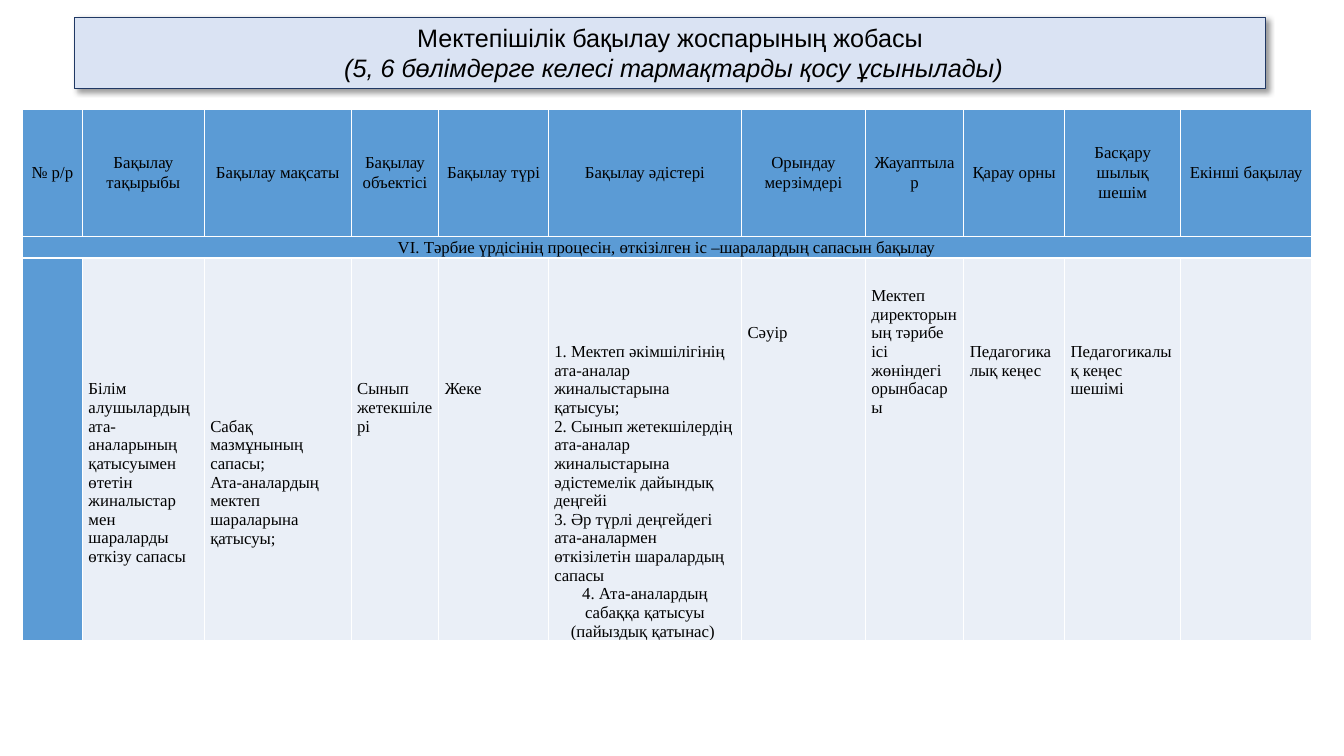
from dataclasses import dataclass

from lxml import etree
from pptx import Presentation
from pptx import util as u
from pptx.dml.color import RGBColor
from pptx.enum import shapes, text
from pptx.oxml import parse_xml
from pptx.oxml.ns import nsdecls, qn


@dataclass(frozen=True)
class Theme:
    ink: str = "000000"
    banner: str = "DAE3F3"
    banner_line: str = "203864"
    head: str = "5B9BD5"
    body: str = "EAEFF7"
    border: str = "FFFFFF"
    title_font: str = "Arial"
    table_font: str = "Times New Roman"
    title_size: int = 18
    table_size: int = 12


theme = Theme()
rgb = RGBColor.from_string
CENTER, LEFT = text.PP_ALIGN.CENTER, text.PP_ALIGN.LEFT


def write(tf, line, first=True, font=theme.table_font, size=theme.table_size,
          align=LEFT, italic=False, spacing=None):
    p = tf.paragraphs[0] if first else tf.add_paragraph()
    p.alignment = align
    if spacing:
        p.line_spacing = spacing
    r = p.add_run()
    r.text = line
    r.font.name, r.font.size = font, u.Pt(size)
    r.font.italic, r.font.bold = italic, False
    r.font.color.rgb = rgb(theme.ink)


def style_cell(cell, fill, side, anchor, bottom=0):
    cell.margin_left = cell.margin_right = u.Cm(side)
    cell.margin_top, cell.margin_bottom = 0, u.Cm(bottom)
    cell.vertical_anchor = anchor
    tc_pr = cell._tc.get_or_add_tcPr()
    for edge in ("lnL", "lnR", "lnT", "lnB"):
        ln = etree.SubElement(tc_pr, qn(f"a:{edge}"), w=str(u.Pt(1)))
        paint = etree.SubElement(ln, qn("a:solidFill"))
        etree.SubElement(paint, qn("a:srgbClr"), val=theme.border)
    cell.fill.solid()
    cell.fill.fore_color.rgb = rgb(fill)


prs = Presentation()
prs.slide_width, prs.slide_height = u.Cm(33.87), u.Cm(19.05)
s = prs.slides.add_slide(prs.slide_layouts[6])

# Title banner with a soft shadow
sp = s.shapes.add_shape(shapes.MSO_SHAPE.RECTANGLE,
                        u.Cm(1.88), u.Cm(0.43), u.Cm(30.02), u.Cm(1.8))
sp.fill.solid()
sp.fill.fore_color.rgb = rgb(theme.banner)
sp.line.color.rgb = rgb(theme.banner_line)
sp.line.width = u.Pt(0.75)
sp.shadow.inherit = False
sp._element.spPr.find(qn("a:effectLst")).append(parse_xml(
    f'<a:outerShdw {nsdecls("a")} blurRad="{u.Pt(4)}" dist="{u.Pt(3)}" '
    'dir="2700000" algn="tl" rotWithShape="0"><a:srgbClr val="000000">'
    '<a:alpha val="40000"/></a:srgbClr></a:outerShdw>'))
sp.text_frame.word_wrap = True
title = dict(font=theme.title_font, size=theme.title_size, align=CENTER)
write(sp.text_frame, "Мектепішілік бақылау жоспарының жобасы", **title)
write(sp.text_frame, " (5, 6 бөлімдерге келесі тармақтарды қосу ұсынылады)",
      first=False, italic=True, **title)

# Columns: width in cm, heading, body paragraphs, free lines under the body
columns = [
    (1.52, "№ р/р", [], 0),
    (3.07, "Бақылау тақырыбы",
     ["Білім алушылардың ата-аналарының қатысуымен өтетін жиналыстар мен "
      "шараларды өткізу сапасы"], 4),
    (3.7, "Бақылау мақсаты",
     ["Сабақ мазмұнының сапасы;",
      "Ата-аналардың мектеп шараларына қатысуы;"], 5),
    (2.21, "Бақылау объектісі", ["Сынып жетекшілері"], 11),
    (2.76, "Бақылау түрі", ["Жеке"], 13),
    (4.87, "Бақылау әдістері",
     ["1. Мектеп әкімшілігінің ата-аналар жиналыстарына қатысуы;",
      "2. Сынып жетекшілердің ата-аналар жиналыстарына әдістемелік "
      "дайындық деңгейі",
      "3. Әр түрлі деңгейдегі ата-аналармен өткізілетін шаралардың сапасы",
      "4. Ата-аналардың сабаққа қатысуы (пайыздық қатынас) "], 0),
    (3.12, "Орындау мерзімдері", ["Сәуір"], 16),
    (2.48, "Жауаптылар",
     ["Мектеп директорының тәрибе ісі жөніндегі орынбасары"], 12),
    (2.54, "Қарау орны", ["Педагогикалық кеңес"], 14),
    (2.93, "Басқару шылық шешім", ["Педагогикалық кеңес шешімі"], 13),
    (3.29, "Екінші бақылау", [], 0),
]
row_heights = [3.2, 0.55, 9.65]
line_height = 0.47

# Inspection plan table
table = s.shapes.add_table(
    len(row_heights), len(columns), u.Cm(0.56), u.Cm(2.75),
    u.Cm(sum(c[0] for c in columns)), u.Cm(sum(row_heights))).table
table.first_row = table.horz_banding = False
for row, height in zip(table.rows, row_heights):
    row.height = u.Cm(height)

for i, (width, heading, lines, free_lines) in enumerate(columns):
    table.columns[i].width = u.Cm(width)
    head, section, body = (table.cell(row, i) for row in range(3))
    style_cell(head, theme.head, 0.18, text.MSO_ANCHOR.MIDDLE)
    write(head.text_frame, heading, align=CENTER, spacing=1.07)
    style_cell(section, theme.head, 0.15, text.MSO_ANCHOR.MIDDLE)
    style_cell(body, theme.body if i else theme.head, 0.15,
               text.MSO_ANCHOR.BOTTOM, free_lines * line_height)
    for n, line in enumerate(lines):
        write(body.text_frame, line, first=n == 0,
              align=CENTER if line.startswith("4.") else LEFT)

# Section row across the whole table
section = table.cell(1, 0)
section.merge(table.cell(1, len(columns) - 1))
write(section.text_frame,
      "VІ. Тәрбие үрдісінің процесін, өткізілген іс –шаралардың сапасын бақылау",
      align=CENTER, spacing=1.07)

prs.save("out.pptx")
